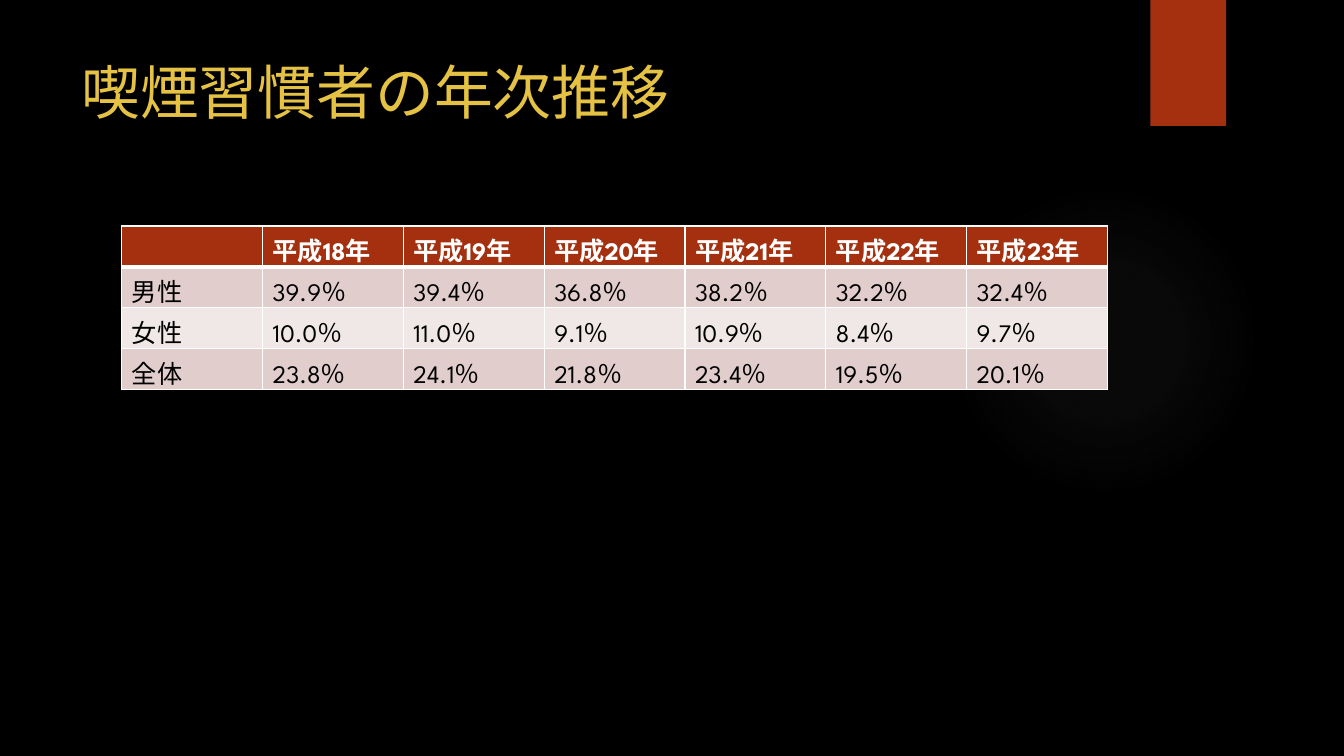
from dataclasses import dataclass

from lxml.etree import SubElement
from pptx import Presentation
from pptx.dml.color import RGBColor
from pptx.enum.lang import MSO_LANGUAGE_ID
from pptx.enum.shapes import MSO_SHAPE
from pptx.enum.text import MSO_ANCHOR
from pptx.oxml import parse_xml
from pptx.oxml.ns import nsdecls, qn
from pptx.shapes.autoshape import Shape
from pptx.slide import Slide
from pptx.table import _Cell
from pptx.text.text import _Paragraph
from pptx.util import Pt

BLACK = RGBColor(0x00, 0x00, 0x00)
WHITE = RGBColor(0xFF, 0xFF, 0xFF)
RUST = RGBColor(0xA5, 0x30, 0x0F)
GOLD = RGBColor(0xE5, 0xC2, 0x43)
GLOW = RGBColor(0x84, 0x84, 0x84)
BAND_DARK = RGBColor(0xE1, 0xCD, 0xCC)
BAND_LIGHT = RGBColor(0xF0, 0xE8, 0xE7)
FONT = "League Spartan"
GLOW_STOPS = ((0, 7), (36, 6), (69, 0))  # position %, opacity %


@dataclass(frozen=True)
class RowStyle:
    fill: RGBColor
    color: RGBColor
    bold: bool
    top: float
    bottom: float


HEADER = RowStyle(RUST, WHITE, True, 1, 3)
FIRST = RowStyle(BAND_DARK, BLACK, False, 3, 1)
LIGHT = RowStyle(BAND_LIGHT, BLACK, False, 1, 1)
DARK = RowStyle(BAND_DARK, BLACK, False, 1, 1)

ROWS = (
    (HEADER, ("", *(f"平成{year}年" for year in range(18, 24)))),
    (FIRST, ("男性", "39.9％", "39.4％", "36.8％", "38.2％", "32.2％", "32.4％")),
    (LIGHT, ("女性", "10.0％", "11.0％", "9.1％", "10.9％", "8.4％", "9.7％")),
    (DARK, ("全体", "23.8％", "24.1％", "21.8％", "23.4％", "19.5％", "20.1％")),
)


def write(p: _Paragraph, text: str, size: float, color: RGBColor,
          bold: bool = False) -> None:
    r = p.add_run()
    r.text = text
    formats = {"name": FONT, "size": Pt(size), "bold": bold,
               "language_id": MSO_LANGUAGE_ID.JAPANESE}
    for name, value in formats.items():
        setattr(r.font, name, value)
    r.font.color.rgb = color


def add_plain(s: Slide, kind: MSO_SHAPE, left: float, top: float,
              width: float, height: float, color: RGBColor) -> Shape:
    sp = s.shapes.add_shape(kind, Pt(left), Pt(top), Pt(width), Pt(height))
    sp.shadow.inherit = False
    sp.fill.solid()
    sp.fill.fore_color.rgb = color
    sp.line.fill.background()
    return sp


def add_glow(s: Slide) -> None:
    sp = add_plain(s, MSO_SHAPE.OVAL, 677.5, 131.8, 221.8, 221.8, GLOW)
    stops = "".join(
        f'<a:gs pos="{pos * 1000}"><a:srgbClr val="{GLOW}">'
        f'<a:alpha val="{alpha * 1000}"/></a:srgbClr></a:gs>'
        for pos, alpha in GLOW_STOPS)
    gradient = parse_xml(
        f'<a:gradFill {nsdecls("a")}><a:gsLst>{stops}</a:gsLst>'
        '<a:path path="circle"><a:fillToRect l="50000" t="50000" '
        'r="50000" b="50000"/></a:path></a:gradFill>')
    solid = sp.element.spPr.find(qn("a:solidFill"))
    sp.element.spPr.replace(solid, gradient)


def add_title(s: Slide, text: str) -> None:
    tf = s.shapes.add_textbox(Pt(51), Pt(36), Pt(741), Pt(110)).text_frame
    tf.word_wrap = True
    tf.vertical_anchor = MSO_ANCHOR.TOP
    write(tf.paragraphs[0], text, 42, GOLD)


def style_cell(cell: _Cell, style: RowStyle) -> None:
    """Set the borders first, as the schema puts them before the fill."""
    props = cell._tc.get_or_add_tcPr()
    borders = {"a:lnL": 1, "a:lnR": 1, "a:lnT": style.top, "a:lnB": style.bottom}
    for tag, width in borders.items():
        line = SubElement(props, qn(tag), w=str(Pt(width)))
        fill = SubElement(line, qn("a:solidFill"))
        SubElement(fill, qn("a:srgbClr"), val=str(WHITE))
    cell.fill.solid()
    cell.fill.fore_color.rgb = style.fill


def add_smoking_table(s: Slide) -> None:
    count = len(ROWS[0][1])
    table = s.shapes.add_table(len(ROWS), count, Pt(87), Pt(161.5),
                               Pt(100.6 * count), Pt(29.2 * len(ROWS))).table
    for row, (style, texts) in zip(table.rows, ROWS):
        for cell, text in zip(row.cells, texts):
            style_cell(cell, style)
            if text:
                write(cell.text_frame.paragraphs[0], text, 18,
                      style.color, style.bold)


def main() -> None:
    prs = Presentation()
    prs.slide_width, prs.slide_height = Pt(960), Pt(540)
    s = prs.slides.add_slide(prs.slide_layouts[6])
    s.background.fill.solid()
    s.background.fill.fore_color.rgb = BLACK
    add_glow(s)
    add_plain(s, MSO_SHAPE.RECTANGLE, 821.8, 0, 54, 90, RUST)
    add_title(s, "喫煙習慣者の年次推移")
    add_smoking_table(s)
    prs.save("out.pptx")


if __name__ == "__main__":
    main()
